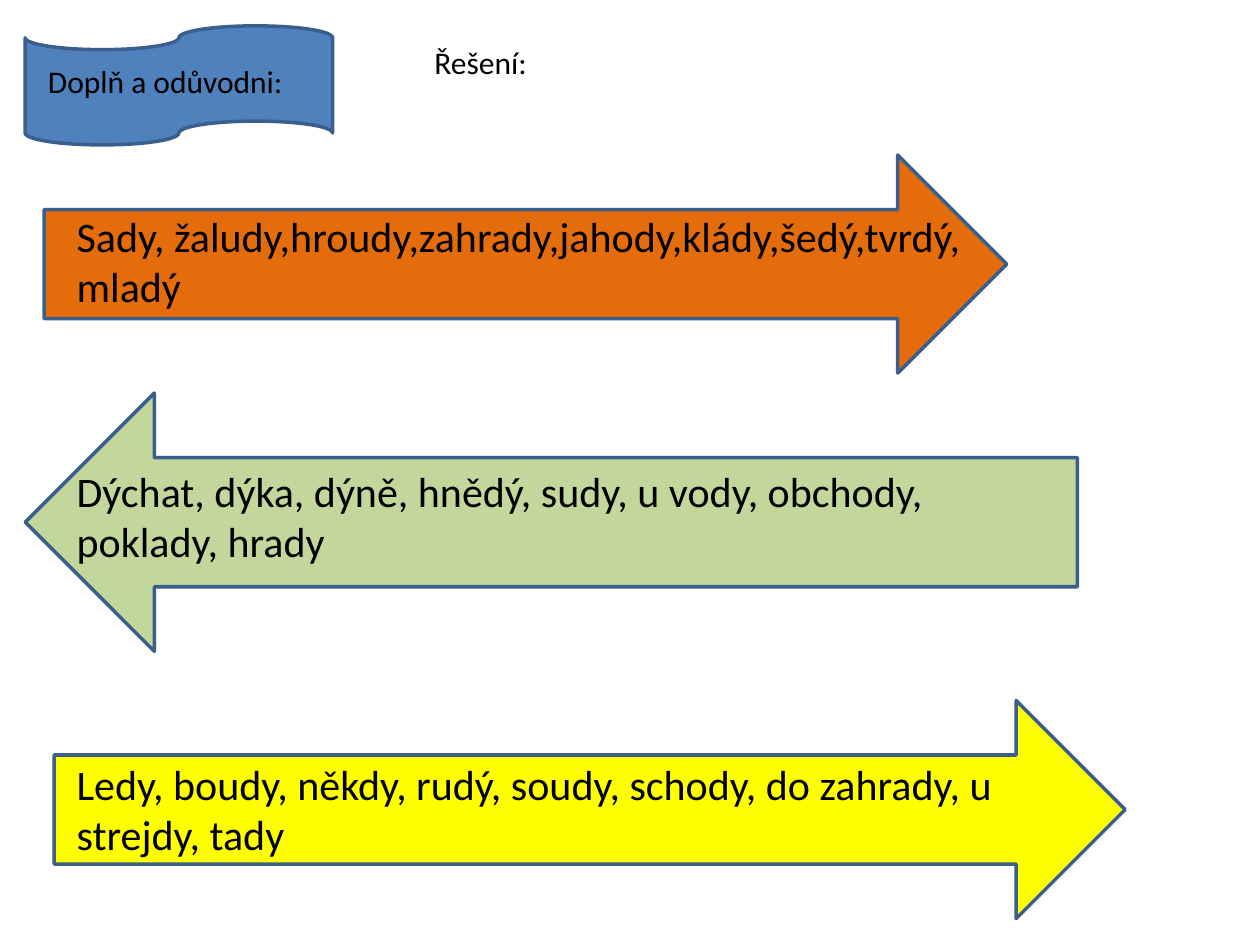
from typing import NamedTuple

from pptx import Presentation
from pptx.dml.color import RGBColor
from pptx.enum.shapes import MSO_SHAPE
from pptx.enum.text import MSO_ANCHOR, MSO_AUTO_SIZE, PP_ALIGN
from pptx.util import Pt

OUTLINE = "3A5F8C"
FRAME_FORMAT = {
    "word_wrap": True,
    "auto_size": MSO_AUTO_SIZE.NONE,
    "vertical_anchor": MSO_ANCHOR.TOP,
    "margin_left": Pt(7.2),
    "margin_right": Pt(7.2),
    "margin_top": Pt(3.6),
    "margin_bottom": Pt(3.6),
}


class Area(NamedTuple):
    left: float
    top: float
    width: float
    height: float


class Banner(NamedTuple):
    preset: MSO_SHAPE
    area: Area
    fill: str


class Line(NamedTuple):
    text: str
    size: float
    gap_before: float = 0


BANNERS = [
    Banner(MSO_SHAPE.LEFT_ARROW, Area(14.4, 224.6, 601.2, 147.6), "C3D69B"),
    Banner(MSO_SHAPE.RIGHT_ARROW, Area(31, 400.3, 612, 124.6), "FFFF00"),
    Banner(MSO_SHAPE.RIGHT_ARROW, Area(25.2, 88.6, 550.1, 124.6), "E46C0A"),
    Banner(MSO_SHAPE.FLOWCHART_PUNCHED_TAPE, Area(14.4, 14.8, 175.7, 68), "4F81BD"),
]
HEADING = [Line("Doplň a odůvodni:", 18)]
SOLUTION = [Line("Řešení:", 18)]
WORD_ROWS = [
    Line("Sady, žaludy,hroudy,zahrady,jahody,klády,šedý,tvrdý, mladý", 24),
    Line("Dýchat, dýka, dýně, hnědý, sudy, u vody, obchody, poklady, hrady", 24, 88),
    Line("Ledy, boudy, někdy, rudý, soudy, schody, do zahrady, u strejdy, tady", 24, 110),
]


def color(value: str) -> RGBColor:
    return RGBColor.from_string(value)


def set_format(target, values: dict) -> None:
    for name, value in values.items():
        setattr(target, name, value)


def draw_banner(page, banner: Banner) -> None:
    shape = page.shapes.add_shape(banner.preset, *map(Pt, banner.area))
    shape.shadow.inherit = False
    shape.fill.solid()
    shape.fill.fore_color.rgb = color(banner.fill)
    shape.line.color.rgb = color(OUTLINE)
    shape.line.width = Pt(2)


def write_lines(box, area: Area, lines: list[Line]) -> None:
    """Place a text box or placeholder and fill it, one paragraph per line."""
    set_format(box, {name: Pt(value) for name, value in area._asdict().items()})
    frame = box.text_frame
    set_format(frame, FRAME_FORMAT)
    for index, line in enumerate(lines):
        para = frame.add_paragraph() if index else frame.paragraphs[0]
        set_format(para, {"alignment": PP_ALIGN.LEFT, "space_before": Pt(line.gap_before)})
        span = para.add_run()
        span.text = line.text
        set_format(span.font, {"name": "Calibri", "size": Pt(line.size)})
        span.font.color.rgb = color("000000")


def add_text(page, area: Area, lines: list[Line]) -> None:
    write_lines(page.shapes.add_textbox(*map(Pt, area)), area, lines)


def main() -> None:
    deck = Presentation()
    set_format(deck, {"slide_width": Pt(720), "slide_height": Pt(540)})
    page = deck.slides.add_slide(deck.slide_layouts[5])

    for banner in BANNERS:
        draw_banner(page, banner)

    title = page.shapes.title
    write_lines(title, Area(20.2, 31.7, 402.5, 28.8), HEADING)
    page.shapes.element.append(title.element)  # in front of the tape

    add_text(page, Area(36.7, 116.6, 583.9, 378), WORD_ROWS)
    add_text(page, Area(241.2, 20.9, 169.9, 28.8), SOLUTION)
    deck.save("out.pptx")


if __name__ == "__main__":
    main()
